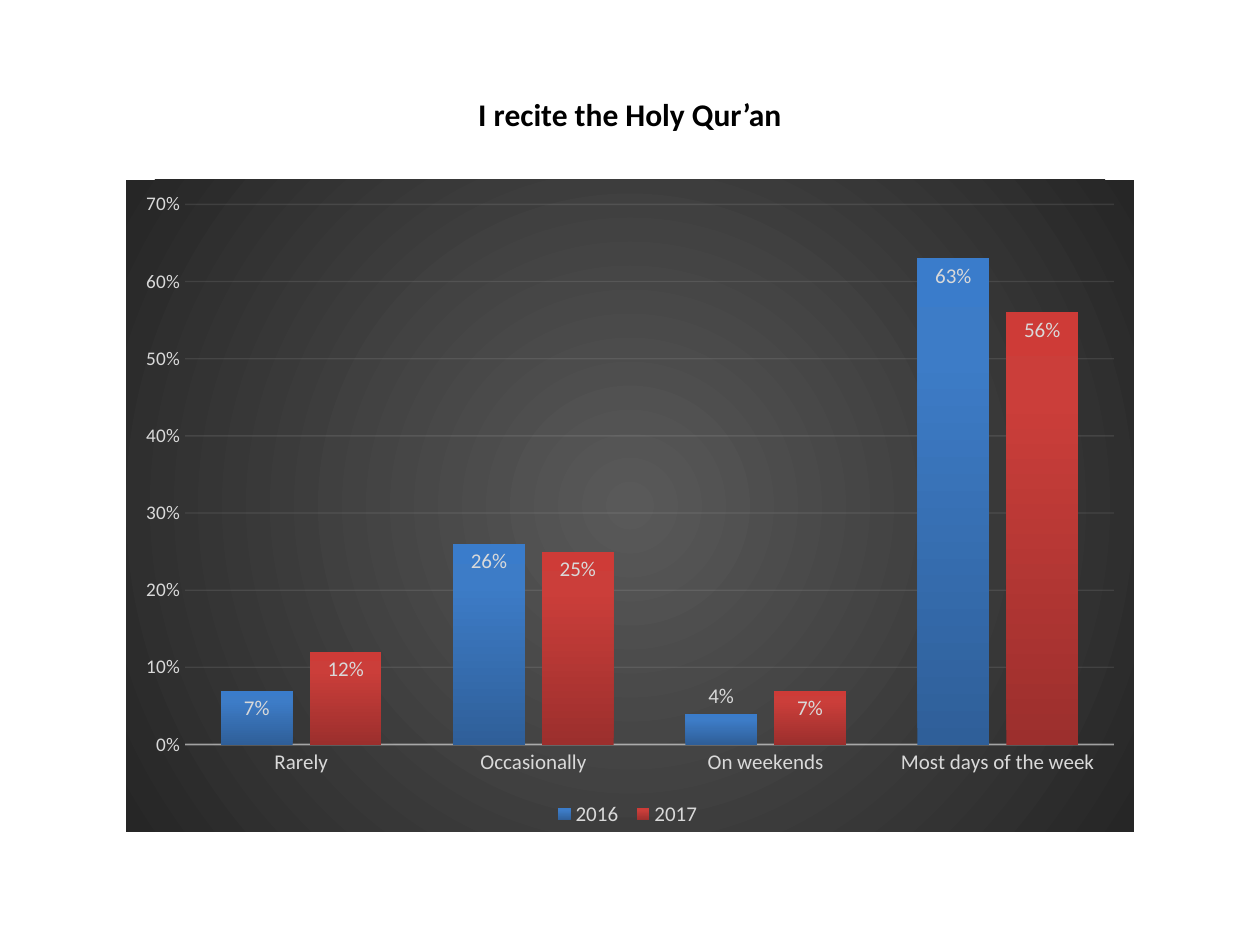
from lxml import etree
from pptx import Presentation, util as u
from pptx.chart.data import CategoryChartData
from pptx.dml.color import RGBColor
from pptx.enum import chart as ch, text
from pptx.oxml import parse_xml
from pptx.oxml.ns import nsdecls, qn

WIDTH, HEIGHT = u.Inches(10), u.Inches(7.5)
FONT = "Calibri"
COLORS = {"title": "000000", "label": "D9D9D9", "line": "F2F2F2",
          "centre": "595959", "edge": "262626"}
CATEGORIES = ["Rarely", "Occasionally", "On weekends", "Most days of the week"]
YEARS = {
    "2016 ": ([0.07, 0.26, 0.04, 0.63], [(0, "2F5F99"), (80, "3D7CC7"), (100, "3A7CCB")]),
    "2017 ": ([0.12, 0.25, 0.07, 0.56], [(0, "9C2F2D"), (80, "CB3E3A"), (100, "CE3B37")]),
}
UPWARD = '<a:lin ang="16200000" scaled="0"/>'
RADIAL = ('<a:path path="circle"><a:fillToRect l="50000" t="50000" '
          'r="50000" b="50000"/></a:path>')


def style_font(font, size, color="label", bold=False):
    """Set typeface, size, weight and colour of a font."""
    font.name, font.size, font.bold = FONT, u.Pt(size), bold
    font.color.rgb = RGBColor.from_string(COLORS[color])


def write_text(frame, wording, size, color, bold=False, align=text.PP_ALIGN.CENTER):
    """Write one formatted paragraph into a text frame."""
    frame.word_wrap = True
    frame.vertical_anchor = text.MSO_ANCHOR.MIDDLE
    paragraph = frame.paragraphs[0]
    paragraph.alignment = align
    run = paragraph.add_run()
    run.text = wording
    style_font(run.font, size, color, bold)


def gradient(stops, direction):
    """Return a gradient fill element from (percent, colour) stops."""
    marks = "".join(f'<a:gs pos="{pos * 1000}"><a:srgbClr val="{color}"/></a:gs>'
                    for pos, color in stops)
    return parse_xml(f'<a:gradFill {nsdecls("a")} rotWithShape="1">'
                     f'<a:gsLst>{marks}</a:gsLst>{direction}</a:gradFill>')


def style_line(line, width, opacity):
    """Give a chart line its width and a partly transparent colour."""
    line.width = u.Pt(width)
    line.color.rgb = RGBColor.from_string(COLORS["line"])
    for color in line._get_or_add_ln().iter(qn("a:srgbClr")):
        etree.SubElement(color, qn("a:alpha")).set("val", str(opacity * 1000))


def style_background(chart):
    """Fill the chart area with a radial gradient and no border."""
    area = parse_xml(f'<c:spPr {nsdecls("c", "a")}><a:ln><a:noFill/></a:ln></c:spPr>')
    area.insert(0, gradient([(0, COLORS["centre"]), (100, COLORS["edge"])], RADIAL))
    chart._chartSpace.find(qn("c:chart")).addnext(area)


def style_axes(chart):
    """Format the category axis, the percentage axis and its gridlines."""
    answers, share = chart.category_axis, chart.value_axis
    for axis, size in ((answers, 12), (share, 11)):
        axis.major_tick_mark = axis.minor_tick_mark = ch.XL_TICK_MARK.NONE
        style_font(axis.tick_labels.font, size)
    style_line(answers.format.line, 1, 54)
    share.minimum_scale, share.maximum_scale, share.major_unit = 0, 0.7, 0.1
    share.tick_labels.number_format = "0%"
    share.tick_labels.number_format_is_linked = False
    share.format.line.fill.background()
    share.has_major_gridlines = True
    style_line(share.major_gridlines.format.line, 0.75, 10)


def style_year(series, stops):
    """Give the columns of one year their gradient and value labels."""
    series.invert_if_negative = False
    series._element.get_or_add_spPr().insert(0, gradient(stops, UPWARD))
    labels = series.data_labels
    labels.show_value = True
    labels.number_format, labels.number_format_is_linked = "0%", False
    labels.position = ch.XL_LABEL_POSITION.INSIDE_END
    style_font(labels.font, 12)


def add_columns(slide):
    """Add the clustered column chart of both years."""
    data = CategoryChartData(number_format="0%")
    data.categories = CATEGORIES
    for year, (shares, _) in YEARS.items():
        data.add_series(year, shares)
    chart = slide.shapes.add_chart(
        ch.XL_CHART_TYPE.COLUMN_CLUSTERED, int(WIDTH * 0.1), int(HEIGHT * 0.19),
        int(WIDTH * 0.8), int(HEIGHT * 0.69), data).chart
    style_font(chart.font, 10, "title")
    chart.has_title = False
    style_background(chart)
    style_axes(chart)
    plot = chart.plots[0]
    plot.gap_width, plot.overlap, plot.vary_by_categories = 100, -24, False
    for series, (_, stops) in zip(plot.series, YEARS.values()):
        style_year(series, stops)
    weekend = plot.series[0].points[2].data_label
    style_font(weekend.font, 12)
    weekend.position = ch.XL_LABEL_POSITION.OUTSIDE_END
    chart.has_legend = True
    chart.legend.position = ch.XL_LEGEND_POSITION.BOTTOM
    chart.legend.include_in_layout = False
    style_font(chart.legend.font, 12)


def add_title(slide, wording):
    """Move the title placeholder and write the question into it."""
    title = slide.shapes.title
    title.left, title.top = int(WIDTH * 0.05), u.Inches(0.55)
    title.width, title.height = int(WIDTH * 0.9), u.Inches(0.7)
    write_text(title.text_frame, wording, 18, "title", bold=True)


def main():
    """Build the slide and save it."""
    deck = Presentation()
    deck.slide_width, deck.slide_height = WIDTH, HEIGHT
    slide = deck.slides.add_slide(deck.slide_layouts[5])
    add_title(slide, "I recite the Holy Qur’an")
    add_columns(slide)
    deck.save("out.pptx")


if __name__ == "__main__":
    main()
